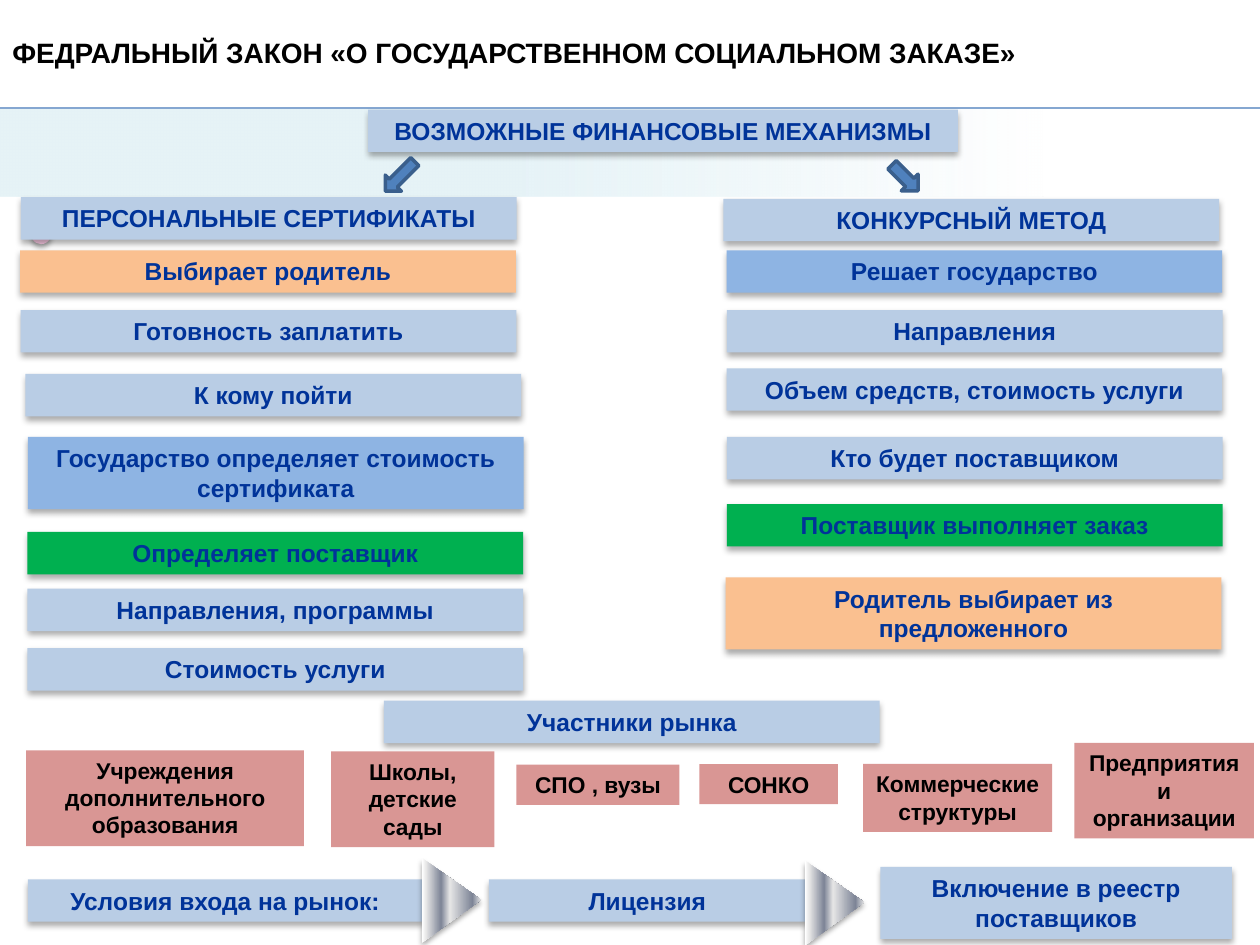
"""Build a slide on the funding mechanisms of the state social order."""
import pptx
import pptx.dml.color
import pptx.enum.shapes
import pptx.enum.text
import pptx.oxml
import pptx.oxml.ns
import pptx.util

Pt = pptx.util.Pt
qn = pptx.oxml.ns.qn
KIND = pptx.enum.shapes.MSO_SHAPE
SKY, BLUE, PEACH, GREEN = "B9CDE5", "8EB4E3", "FAC090", "00B050"
ROSE, NAVY, BLACK = "D99694", "003399", "000000"
ONE, TWO, WIDE = 24.24, 41.2, 283.3

HEADS = [
    (210.4, 62.6, 337, ONE, SKY, "ВОЗМОЖНЫЕ ФИНАНСОВЫЕ МЕХАНИЗМЫ"),
    (12, 112.7, WIDE, ONE, SKY, "ПЕРСОНАЛЬНЫЕ СЕРТИФИКАТЫ"),
    (413.4, 113.6, WIDE, ONE, SKY, "КОНКУРСНЫЙ МЕТОД"),
]
LEFT = [
    (11.5, 143, WIDE, ONE, PEACH, "Выбирает родитель"),
    (11.8, 177.2, WIDE, ONE, SKY, "Готовность заплатить"),
    (14.5, 213.7, WIDE, ONE, SKY, "К кому пойти"),
    (16, 249.7, WIDE, TWO, BLUE, "Государство определяет стоимость сертификата"),
    (15.7, 304, WIDE, ONE, GREEN, "Определяет поставщик"),
    (15.7, 336.4, WIDE, ONE, SKY, "Направления, программы"),
    (15.7, 370.4, WIDE, ONE, SKY, "Стоимость услуги"),
]
RIGHT = [
    (415.2, 143, WIDE, ONE, BLUE, "Решает государство"),
    (415.4, 177.2, WIDE, ONE, SKY, "Направления"),
    (415.2, 210.5, WIDE, ONE, SKY, "Объем средств, стоимость услуги"),
    (415.4, 249.7, WIDE, ONE, SKY, "Кто будет поставщиком"),
    (415.4, 288, WIDE, ONE, GREEN, "Поставщик выполняет заказ"),
    (414.7, 329.9, WIDE, TWO, PEACH, "Родитель выбирает из предложенного"),
]
MARKET = [
    (219.4, 400.4, WIDE, ONE, SKY, "Участники рынка"),
    (16, 502.5, 225.4, ONE, SKY, "Условия входа на рынок:"),
    (279.4, 502.5, 181, ONE, SKY, "Лицензия"),
    (503, 495.4, 201, TWO, SKY, "Включение в реестр поставщиков"),
]
PLAYERS = [
    (15, 428.8, 158.7, 54.7, "Учреждения дополнительного образования"),
    (189.2, 429.4, 93.3, 54.7, "Школы, детские сады"),
    (295, 437, 93.3, 23, "СПО , вузы"),
    (399.6, 436.6, 79.3, 23, "СОНКО"),
    (493.2, 436.6, 108, 38.9, "Коммерческие структуры"),
    (614, 424.5, 102.5, 54.7, "Предприятия и организации"),
]
METAL = [(0, "FFFFFF", 100), (7, "E6E6E6", 100), (32, "7D8496", 100),
         (47, "E6E6E6", 100), (85, "7D8496", 100), (100, "E6E6E6", 100)]
HAZE = [(0, "DBEEF4", 0), (50, "DBEEF4", 68), (100, "DBEEF4", 68)]


def hue(code):
    """Return the colour for a hex string."""
    return pptx.dml.color.RGBColor.from_string(code)


def tint(parent, code, alpha):
    """Add a colour with an opacity in percent."""
    node = pptx.oxml.ns.nsdecls("a")
    parent.append(pptx.oxml.parse_xml(
        f'<a:srgbClr {node} val="{code}"><a:alpha val="{alpha * 1000}"/></a:srgbClr>'))


def shade(shape, alpha, blur, drop):
    """Cast a soft shadow straight down."""
    effect = shape._element.spPr.find(qn("a:effectLst"))
    cast = effect.makeelement(qn("a:outerShdw"), {
        "blurRad": str(Pt(blur)), "dist": str(Pt(drop)),
        "dir": "5400000", "rotWithShape": "0"})
    effect.append(cast)
    tint(cast, BLACK, alpha)


def blend(shape, stops, angle):
    """Fill a shape with a gradient running clockwise from the right."""
    shape.fill.gradient()
    shape.fill.gradient_angle = 360 - angle
    group = shape._element.spPr.find(qn("a:gradFill")).find(qn("a:gsLst"))
    for old in list(group):
        group.remove(old)
    for place, code, alpha in stops:
        stop = group.makeelement(qn("a:gs"), {"pos": str(place * 1000)})
        group.append(stop)
        tint(stop, code, alpha)


def form(slide, kind, x, y, w, h, fill=None, turn=0):
    """Add a plain preset shape."""
    shape = slide.shapes.add_shape(kind, Pt(x), Pt(y), Pt(w), Pt(h))
    shape.shadow.inherit = False
    shape.line.fill.background()
    shape.rotation = turn
    if fill:
        shape.fill.solid()
        shape.fill.fore_color.rgb = hue(fill)
    return shape


def write(shape, text, size, color, align):
    """Put one bold paragraph into a shape."""
    frame = shape.text_frame
    frame.word_wrap = True
    frame.auto_size = pptx.enum.text.MSO_AUTO_SIZE.SHAPE_TO_FIT_TEXT
    frame.vertical_anchor = pptx.enum.text.MSO_ANCHOR.TOP
    para = frame.paragraphs[0]
    para.text = text
    para.alignment = align
    para.font.name = "Arial"
    para.font.size = Pt(size)
    para.font.bold = True
    para.font.color.rgb = hue(color)


def box(slide, x, y, w, h, fill, text, size=14, color=NAVY):
    """Add a filled box with centred text."""
    shape = form(slide, KIND.RECTANGLE, x, y, w, h, fill)
    write(shape, text, size, color, pptx.enum.text.PP_ALIGN.CENTER)
    return shape


def rule(slide, y):
    """Draw the line under the title."""
    line = slide.shapes.add_connector(
        pptx.enum.shapes.MSO_CONNECTOR.STRAIGHT, 0, Pt(y), Pt(720), Pt(y))
    line.line.color.rgb = hue("85A7D1")
    line.line.width = Pt(1.5)
    props = line._element.spPr
    props.append(props.makeelement(qn("a:effectLst"), {}))


def arrow(slide, x, y, w, h, turn):
    """Add a block arrow."""
    shape = form(slide, KIND.LEFT_ARROW, x, y, w, h, "4F81BD", turn)
    shape.line.color.rgb = hue("3A5F8C")
    shape.line.width = Pt(2)


def wedge(slide, x, y):
    """Add a metallic triangle that points right."""
    shape = form(slide, KIND.ISOSCELES_TRIANGLE, x, y, 48.2, 33.8, turn=90)
    shape.adjustments[0] = 0.49
    blend(shape, METAL, 270)
    shade(shape, 35, 3.1, 1.8)


def main():
    """Build and save the slide."""
    deck = pptx.Presentation()
    deck.slide_width, deck.slide_height = Pt(720), Pt(540)
    slide = deck.slides.add_slide(deck.slide_layouts[6])
    band = form(slide, KIND.RECTANGLE, 272.2, -211.5, 50.4, 597.6, turn=90)
    blend(band, HAZE, 90)
    rule(slide, 61.8)
    dot = form(slide, KIND.OVAL, 17.8, 128.2, 11.3, 11.3, "FECEE9")
    shade(dot, 35, 3.1, 1.8)
    for item in HEADS + LEFT + RIGHT + MARKET:
        shade(box(slide, *item), 32, 3.5, 2.2)
    arrow(slide, 216.7, 94.3, 23.8, 13, 315)
    arrow(slide, 506.7, 94.9, 21, 13.5, 225)
    for x, y, w, h, text in PLAYERS:
        box(slide, x, y, w, h, ROSE, text, 13, BLACK)
    wedge(slide, 452.9, 499.2)
    wedge(slide, 234, 497.7)
    title = slide.shapes.add_textbox(0, Pt(16.6), Pt(646.6), Pt(26.6))
    write(title, "ФЕДРАЛЬНЫЙ ЗАКОН «О ГОСУДАРСТВЕННОМ СОЦИАЛЬНОМ ЗАКАЗЕ»",
          16, BLACK, pptx.enum.text.PP_ALIGN.LEFT)
    deck.save("out.pptx")


if __name__ == "__main__":
    main()
